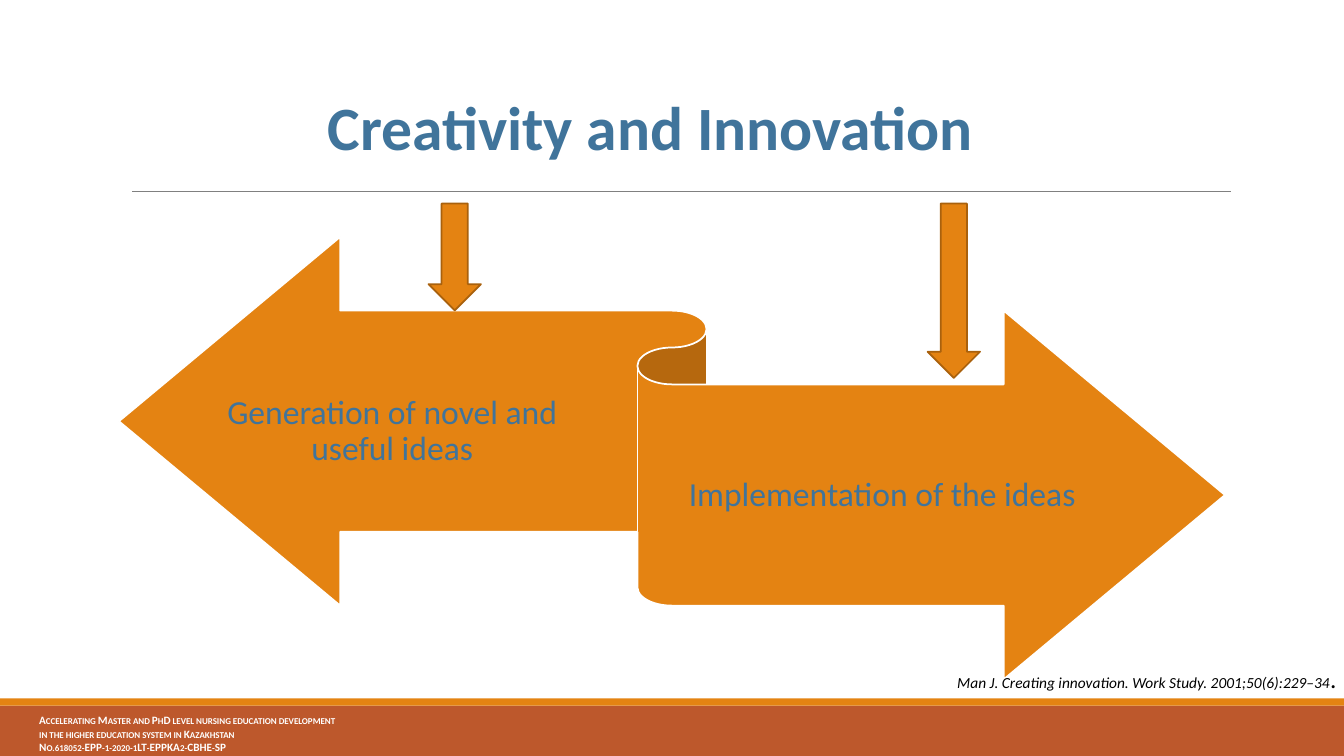
from dataclasses import dataclass

from lxml import etree
from pptx import Presentation
from pptx.dml.color import RGBColor
from pptx.enum.shapes import MSO_CONNECTOR, MSO_SHAPE
from pptx.enum.text import MSO_ANCHOR, PP_ALIGN
from pptx.oxml.ns import qn
from pptx.util import Inches, Pt

RECTANGLE = MSO_SHAPE.RECTANGLE
RIBBON = MSO_SHAPE.LEFT_RIGHT_RIBBON
DOWN_ARROW = MSO_SHAPE.DOWN_ARROW
STRAIGHT = MSO_CONNECTOR.STRAIGHT
LEFT, CENTER, RIGHT = PP_ALIGN.LEFT, PP_ALIGN.CENTER, PP_ALIGN.RIGHT
TOP, MIDDLE, BOTTOM = MSO_ANCHOR.TOP, MSO_ANCHOR.MIDDLE, MSO_ANCHOR.BOTTOM

FONT = "Calibri"
ORANGE, RUST, BROWN = "E48312", "BD582C", "A9610D"
BLUE, WHITE, BLACK, GRAY = "40749B", "FFFFFF", "000000", "808080"


@dataclass(frozen=True)
class Box:
    left: float
    top: float
    width: float
    height: float

    def lengths(self) -> tuple:
        return tuple(Inches(v) for v in (self.left, self.top, self.width, self.height))


@dataclass(frozen=True)
class Figure:
    preset: int
    box: Box
    fill: str
    line: str = ""


@dataclass(frozen=True)
class Style:
    size: float
    color: str
    bold: bool = False
    italic: bool = False
    small_caps: bool = False


FIGURES = [
    Figure(RECTANGLE, Box(0, 7, 13.33, 0.5), RUST),
    Figure(RECTANGLE, Box(0, 6.93, 13.33, 0.07), ORANGE),
    Figure(RIBBON, Box(1.18, 2.35, 10.97, 4.39), ORANGE, WHITE),
    Figure(DOWN_ARROW, Box(4.25, 2.02, 0.52, 1.06), ORANGE, BROWN),
    Figure(DOWN_ARROW, Box(9.2, 2.02, 0.52, 1.73), ORANGE, BROWN),
]
RIBBON_LABELS = [
    ("Generation of novel and useful ideas", Box(2.03, 3.21, 3.72, 2.15)),
    ("Implementation of the ideas", Box(6.61, 3.84, 4.28, 2.15)),
]
PROJECT_LINES = [
    "Accelerating Master and PhD level nursing education development",
    "in the higher education system in Kazakhstan",
    "No.618052-EPP-1-2020-1LT-EPPKA2-CBHE-SP",
]


def rgb(color: str) -> RGBColor:
    return RGBColor.from_string(color)


def draw_figure(slide, figure: Figure) -> None:
    shape = slide.shapes.add_shape(figure.preset, *figure.box.lengths())
    shape.shadow.inherit = False
    shape.fill.solid()
    shape.fill.fore_color.rgb = rgb(figure.fill)
    if figure.line:
        shape.line.color.rgb = rgb(figure.line)
        shape.line.width = Pt(1.25)
    else:
        shape.line.fill.background()


def draw_title_rule(slide) -> None:
    rule = slide.shapes.add_connector(
        STRAIGHT, Inches(1.31), Inches(1.9), Inches(12.21), Inches(1.9))
    rule.line.color.rgb = rgb(GRAY)
    rule.line.width = Pt(0.5)
    etree.SubElement(rule._element.spPr, qn("a:effectLst"))


def add_run(paragraph, text: str, style: Style) -> None:
    run = paragraph.add_run()
    run.text = text
    font = run.font
    font.name = FONT
    font.size = Pt(style.size)
    font.bold = style.bold
    font.italic = style.italic
    font.color.rgb = rgb(style.color)
    if style.small_caps:
        run._r.get_or_add_rPr().set("cap", "small")


def set_frame(frame, anchor, side: float = 0.1, edge: float = 0.05) -> None:
    """Wrap and anchor a text frame, with side and top/bottom insets in inches."""
    frame.word_wrap = True
    frame.vertical_anchor = anchor
    frame.margin_left = frame.margin_right = Inches(side)
    frame.margin_top = frame.margin_bottom = Inches(edge)


def write_title(slide) -> None:
    title = slide.shapes.title
    title.left, title.top, title.width, title.height = Box(0.29, 0.51, 12.33, 1.16).lengths()
    set_frame(title.text_frame, BOTTOM)
    heading = title.text_frame.paragraphs[0]
    heading.alignment = CENTER
    heading.line_spacing = 0.85
    add_run(heading, "Creativity and Innovation", Style(44, BLUE, bold=True))


def write_ribbon_labels(slide) -> None:
    for text, box in RIBBON_LABELS:
        frame = slide.shapes.add_textbox(*box.lengths()).text_frame
        set_frame(frame, MIDDLE, side=0, edge=0.09)
        label = frame.paragraphs[0]
        label.alignment = CENTER
        label.line_spacing = 0.9
        add_run(label, text, Style(24, BLUE))


def write_project(slide) -> None:
    frame = slide.shapes.add_textbox(*Box(0.29, 7.03, 4.59, 0.47).lengths()).text_frame
    set_frame(frame, TOP)
    style = Style(8, WHITE, bold=True, small_caps=True)
    for index, text in enumerate(PROJECT_LINES):
        line = frame.add_paragraph() if index else frame.paragraphs[0]
        line.alignment = LEFT
        add_run(line, text, style)


def write_citation(slide) -> None:
    frame = slide.shapes.add_textbox(*Box(9.34, 6.53, 3.92, 0.4).lengths()).text_frame
    set_frame(frame, TOP, side=0)
    citation = frame.paragraphs[0]
    citation.alignment = RIGHT
    add_run(citation, "Man J. Creating innovation. Work Study. 2001;50(6):229–34",
            Style(11, BLACK, italic=True))
    add_run(citation, ".", Style(18, BLACK, italic=True))


def main() -> None:
    deck = Presentation()
    deck.slide_width, deck.slide_height = Inches(13.33), Inches(7.5)
    slide = deck.slides.add_slide(deck.slide_layouts[5])
    write_title(slide)
    draw_title_rule(slide)
    for figure in FIGURES:
        draw_figure(slide, figure)
    write_ribbon_labels(slide)
    write_project(slide)
    write_citation(slide)
    deck.save("out.pptx")


if __name__ == "__main__":
    main()
